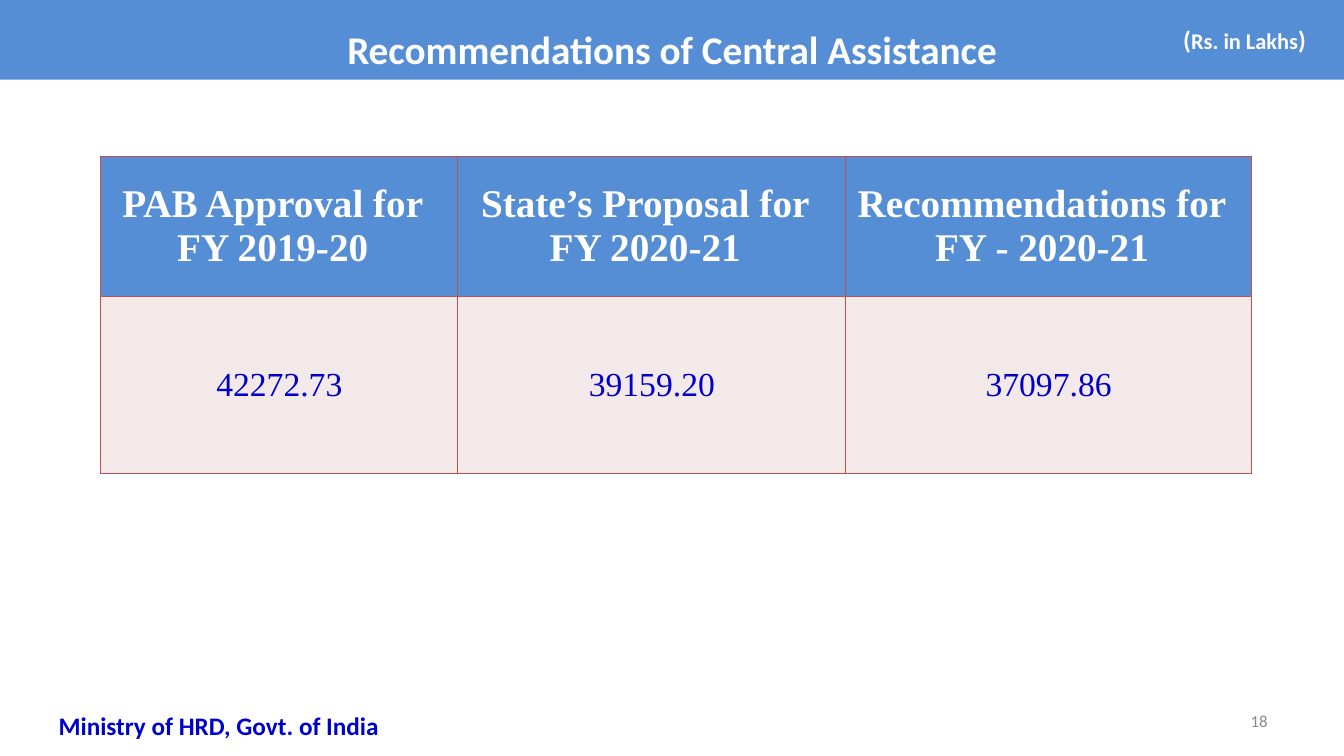
from pptx import Presentation
from pptx import util as u
from pptx.dml.color import RGBColor
from pptx.enum import shapes, text
from pptx.oxml import parse_xml
from pptx.oxml.ns import nsdecls

TITLE = "Recommendations of Central Assistance"
UNIT = [("(", "body"), ("Rs. in Lakhs", "unit"), (")", "body")]
FOOTER = "Ministry of HRD, Govt. of India"
PAGE = "18"
COLUMNS = [
    (3.54, ["PAB Approval for", "FY 2019-20"], "42272.73"),
    (3.85, ["State’s Proposal for", "FY 2020-21"], "39159.20"),
    (4.02, ["Recommendations for", "FY - 2020-21"], "37097.86"),
]
ROW_HEIGHTS = [1.39, 1.76]

THEME = {
    "sans": "Calibri", "serif": "Times New Roman",
    "band": "558ED5", "cell": "F4E9E9", "border": "C0504D",
    "white": "FFFFFF", "blue": "0000CC", "grey": "898989",
    "title": 28, "figure": 24, "body": 18, "unit": 16, "page": 12,
}
LEFT, CENTER, RIGHT = text.PP_ALIGN.LEFT, text.PP_ALIGN.CENTER, text.PP_ALIGN.RIGHT
MIDDLE, TOP = text.MSO_ANCHOR.MIDDLE, text.MSO_ANCHOR.TOP


def rgb(name):
    return RGBColor.from_string(THEME[name])


def style(p, size, color, face="sans", bold=True, align=CENTER):
    p.alignment = align
    f = p.font
    f.name, f.size, f.bold = THEME[face], u.Pt(THEME[size]), bold
    f.color.rgb = rgb(color)


def add_label(s, box, runs, size, color, bold=True, align=CENTER, anchor=TOP, wrap=True):
    tf = s.shapes.add_textbox(*map(u.Inches, box)).text_frame
    tf.word_wrap, tf.vertical_anchor = wrap, anchor
    p = tf.paragraphs[0]
    style(p, size, color, bold=bold, align=align)
    for words, run_size in runs:
        r = p.add_run()
        r.text = words
        if run_size != size:
            r.font.size = u.Pt(THEME[run_size])


def add_title(s):
    sp = s.shapes.add_shape(shapes.MSO_SHAPE.RECTANGLE, 0, 0, u.Inches(13.33), u.Inches(0.79))
    sp.shadow.inherit = False
    sp.fill.solid()
    sp.fill.fore_color.rgb = rgb("band")
    sp.line.fill.background()
    tf = sp.text_frame
    tf.word_wrap, tf.vertical_anchor = True, MIDDLE
    p = tf.paragraphs[0]
    p.text, p.line_spacing = TITLE, 1.4
    style(p, "title", "white")


def fill_cell(cell, lines, fill, margins, **font):
    cell.margin_left, cell.margin_top, cell.margin_right, cell.margin_bottom = map(u.Inches, margins)
    cell.vertical_anchor = MIDDLE
    cell.text = "\n".join(lines)
    for p in cell.text_frame.paragraphs:
        style(p, face="serif", **font)
    cell.fill.solid()
    cell.fill.fore_color.rgb = rgb(fill)
    for i, side in enumerate(("lnL", "lnR", "lnT", "lnB")):
        cell._tc.tcPr.insert(i, parse_xml(
            f'<a:{side} {nsdecls("a")} w="12700"><a:solidFill>'
            f'<a:srgbClr val="{THEME["border"]}"/></a:solidFill></a:{side}>'))


def add_figures(s):
    width = sum(c[0] for c in COLUMNS)
    box = (1, 1.55, width, sum(ROW_HEIGHTS))
    tbl = s.shapes.add_table(len(ROW_HEIGHTS), len(COLUMNS), *map(u.Inches, box)).table
    for row, height in zip(tbl.rows, ROW_HEIGHTS):
        row.height = u.Inches(height)
    for i, (col_width, heading, figure) in enumerate(COLUMNS):
        tbl.columns[i].width = u.Inches(col_width)
        fill_cell(tbl.cell(0, i), heading, "band", (0.07, 0, 0.2, 0),
                  size="title", color="white")
        fill_cell(tbl.cell(1, i), [figure], "cell", (0.01, 0.01, 0.01, 0),
                  size="figure", color="blue", bold=False)


def main():
    prs = Presentation()
    prs.slide_width, prs.slide_height = u.Inches(13.33), u.Inches(7.5)
    s = prs.slides.add_slide(prs.slide_layouts[6])
    add_title(s)
    add_figures(s)
    add_label(s, (9.56, 6.95, 3.11, 0.4), [(PAGE, "page")], "page", "grey",
              bold=False, align=RIGHT, anchor=MIDDLE)
    add_label(s, (11.63, 0.19, 1.43, 0.4), UNIT, "body", "white", wrap=False)
    add_label(s, (0.21, 7, 3.92, 0.4), [(FOOTER, "body")], "body", "blue")
    prs.save("out.pptx")


if __name__ == "__main__":
    main()
